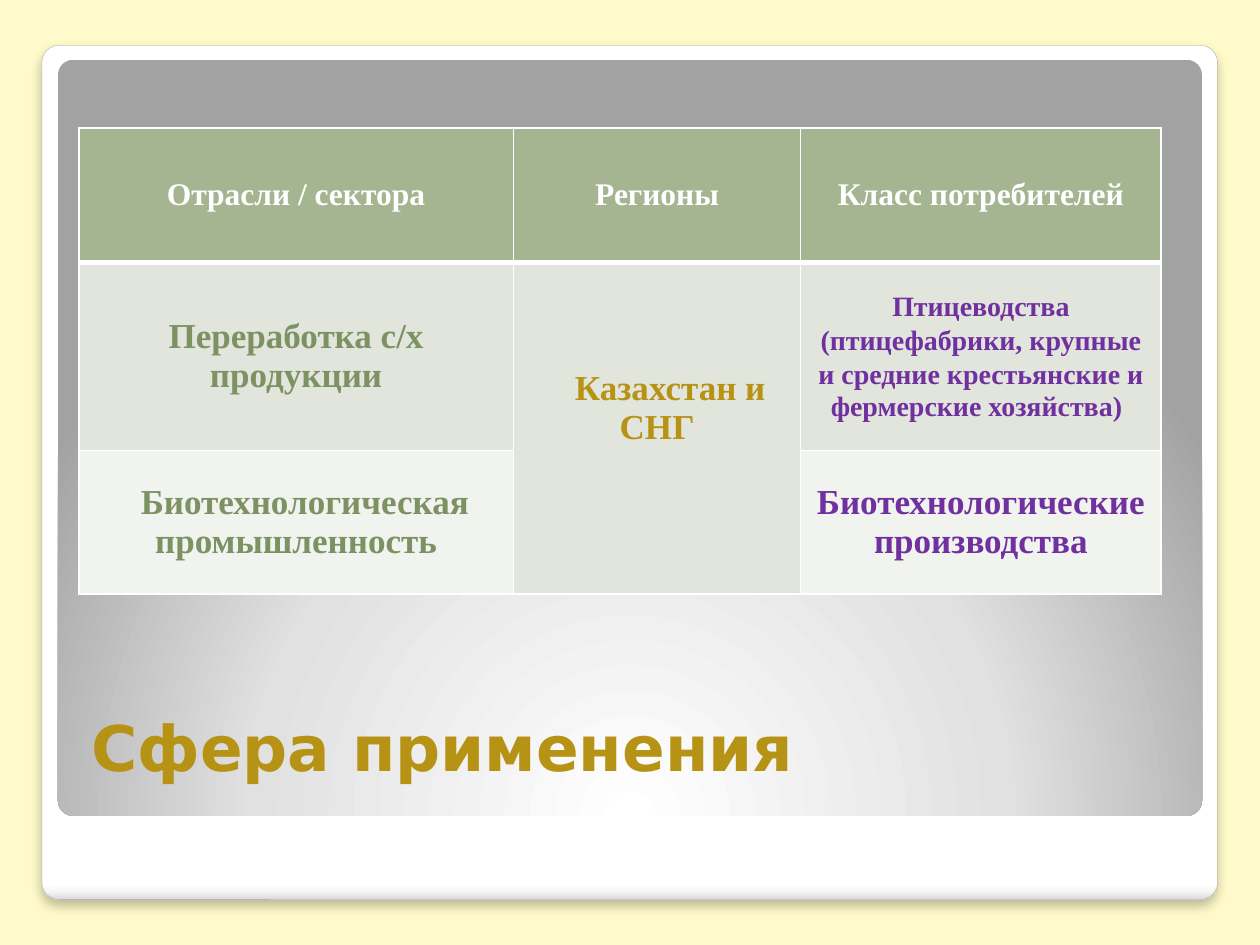
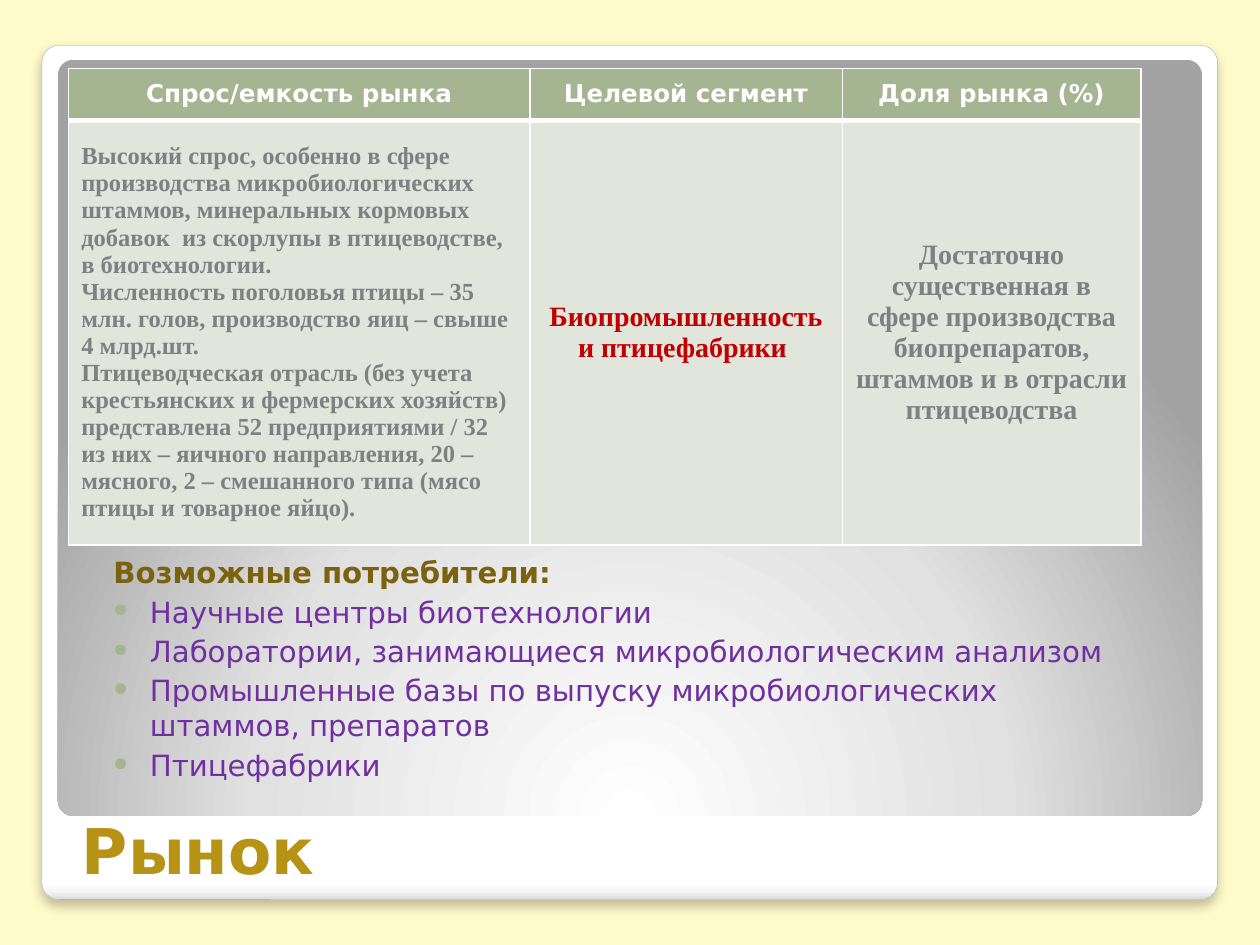
from collections import namedtuple

from lxml.etree import SubElement
from pptx import Presentation
from pptx.dml.color import RGBColor
from pptx.enum.shapes import MSO_SHAPE
from pptx.enum.text import MSO_ANCHOR, MSO_AUTO_SIZE, PP_ALIGN
from pptx.oxml import parse_xml
from pptx.oxml.ns import nsdecls, qn
from pptx.util import Inches, Pt

SLIDE_WIDTH, SLIDE_HEIGHT = Inches(10), Inches(7.5)
COLUMN, ROW = SLIDE_WIDTH / 100, SLIDE_HEIGHT / 75

CREAM = RGBColor(0xFE, 0xFA, 0xC9)
WHITE = RGBColor(0xFF, 0xFF, 0xFF)
PEARL = RGBColor(0xF7, 0xF7, 0xF7)
SILVER = RGBColor(0xE1, 0xE1, 0xE1)
ASH = RGBColor(0xDA, 0xDA, 0xDA)
STEEL = RGBColor(0xA2, 0xA2, 0xA2)
EDGE = RGBColor(0xA4, 0xA4, 0xA4)
GREY = RGBColor(0x80, 0x80, 0x80)
SAGE = RGBColor(0xA5, 0xB5, 0x92)
PALE_SAGE = RGBColor(0xE1, 0xE5, 0xDC)
FAINT_SAGE = RGBColor(0xF0, 0xF3, 0xEE)
OLIVE = RGBColor(0x7D, 0x92, 0x63)
GOLD = RGBColor(0xB7, 0x93, 0x15)
DARK_GOLD = RGBColor(0x7A, 0x62, 0x0E)
PURPLE = RGBColor(0x70, 0x30, 0xA0)
RED = RGBColor(0xC0, 0x00, 0x00)

SANS, SERIF = "DejaVu Sans", "Times New Roman"
TITLE_FONT = {"name": SANS, "size": Pt(36), "bold": True}
CENTRED = {"alignment": PP_ALIGN.CENTER}
BULLET_INDENT = Inches(0.29)

Box = namedtuple("Box", "left top width height")
Entry = namedtuple("Entry", "lines font color para indent tail", defaults=(CENTRED, 0, None))


def grid_box(left, top, width, height):
    """Turn columns and rows of the slide grid into a box."""
    return Box(int(left * COLUMN), int(top * ROW), int(width * COLUMN), int(height * ROW))


def apply(target, values):
    """Set each named attribute on the target."""
    for name, value in values.items():
        setattr(target, name, value)


def write(para, text, font, color, values):
    """Put one formatted span of text in a paragraph."""
    apply(para, values)
    span = para.add_run()
    span.text = text
    apply(span.font, font)
    span.font.color.rgb = color


def shares(total, weights):
    """Split a length in proportion to the weights."""
    return [int(total * weight / sum(weights)) for weight in weights]


def gradient(stops, direction):
    """Build a gradient fill from stops in percent and a direction element."""
    marks = "".join(
        f'<a:gs pos="{place * 1000}"><a:srgbClr val="{color}"/></a:gs>' for place, color in stops
    )
    return parse_xml(
        f'<a:gradFill {nsdecls("a")} rotWithShape="1"><a:gsLst>{marks}</a:gsLst>{direction}</a:gradFill>'
    )


def add_panel(page, box, fill):
    """Add a slightly rounded panel with a gradient fill."""
    panel = page.shapes.add_shape(MSO_SHAPE.ROUNDED_RECTANGLE, *box)
    panel.adjustments[0] = 0.02
    panel.shadow.inherit = False
    panel.line.fill.background()
    panel._element.spPr.find(qn("a:prstGeom")).addnext(fill)
    return panel


def add_frame(deck, page):
    """Give the master its background, card and inner panel."""
    background = deck.slide_master.background.fill
    background.solid()
    background.fore_color.rgb = CREAM
    card_fill = gradient(
        [(0, WHITE), (98, WHITE), (99, PEARL), (100, ASH)], '<a:lin ang="5400000" scaled="0"/>'
    )
    panel_fill = gradient(
        [(0, WHITE), (55, SILVER), (100, STEEL)],
        '<a:path path="circle"><a:fillToRect l="50000" t="175000" r="50000" b="-75000"/></a:path>',
    )
    card = add_panel(page, grid_box(3.33, 3.6, 93.3, 67.8), card_fill)
    card.line.color.rgb = EDGE
    card.line.width = Pt(0.16)
    shadow = parse_xml(
        f'<a:outerShdw {nsdecls("a")} blurRad="{Pt(6)}" dist="{Pt(4)}" dir="5400000" rotWithShape="0">'
        '<a:srgbClr val="000000"><a:alpha val="25000"/></a:srgbClr></a:outerShdw>'
    )
    card._element.spPr.find(qn("a:effectLst")).append(shadow)
    panel = add_panel(page, grid_box(4.6, 4.75, 90.8, 60), panel_fill)
    tree = deck.slide_master.shapes._spTree
    for depth, shape in enumerate((card, panel), start=2):
        tree.insert(depth, shape._element)


def add_title(page, box, text):
    """Place and format the title placeholder."""
    title = page.shapes.title
    apply(title, box._asdict())
    frame = title.text_frame
    apply(frame, {"vertical_anchor": MSO_ANCHOR.BOTTOM, "auto_size": MSO_AUTO_SIZE.NONE, "word_wrap": True})
    write(frame.paragraphs[0], text, TITLE_FONT, GOLD, {"alignment": PP_ALIGN.LEFT})


def set_borders(cell, bottom):
    """Draw white borders round a cell with a given bottom width."""
    properties = cell._tc.get_or_add_tcPr()
    for depth, (side, width) in enumerate((("L", 1), ("R", 1), ("T", 1), ("B", bottom))):
        line = parse_xml(
            f'<a:ln{side} {nsdecls("a")} w="{Pt(width)}"><a:solidFill>'
            f'<a:srgbClr val="{WHITE}"/></a:solidFill></a:ln{side}>'
        )
        properties.insert(depth, line)


def fill_cell(cell, entry):
    """Write an entry's lines into a cell."""
    frame = cell.text_frame
    for number, line in enumerate(entry.lines):
        para = frame.add_paragraph() if number else frame.paragraphs[0]
        write(para, line, entry.font, entry.color, entry.para)
        if entry.indent:
            para._p.get_or_add_pPr().set("indent", str(entry.indent))
        if entry.tail:
            write(para, " ", entry.tail, entry.color, entry.para)


def add_grid(page, box, columns, rows, entries):
    """Add a table with a sage header and pale body rows."""
    table = page.shapes.add_table(len(rows), len(columns), *box).table
    table.horz_banding = False
    for column, width in zip(table.columns, shares(box.width, columns)):
        column.width = width
    for row, height in zip(table.rows, shares(box.height, rows)):
        row.height = height
    fills = (SAGE, PALE_SAGE, FAINT_SAGE)
    for number, line in enumerate(entries):
        for cell, entry in zip(table.rows[number].cells, line):
            cell.vertical_anchor = MSO_ANCHOR.MIDDLE
            cell.fill.solid()
            cell.fill.fore_color.rgb = fills[number]
            set_borders(cell, 1 if number else 3)
            if entry:
                fill_cell(cell, entry)
    return table


def header(labels, font):
    """Make the white header entries of a table."""
    return [Entry([label], font, WHITE) for label in labels]


def add_bullet(para):
    """Give a paragraph a sage bullet and a hanging indent."""
    properties = para._p.get_or_add_pPr()
    properties.set("marL", str(BULLET_INDENT))
    properties.set("indent", str(-BULLET_INDENT))
    SubElement(SubElement(properties, qn("a:buClr")), qn("a:srgbClr")).set("val", str(SAGE))
    SubElement(properties, qn("a:buSzPct")).set("val", "63000")
    SubElement(properties, qn("a:buChar")).set("char", "●")


def add_consumers(page, box, heading, items):
    """Add a bold heading with a bulleted list below it."""
    frame = page.shapes.add_textbox(*box).text_frame
    margins = {"margin_left": 0.2, "margin_top": 0.1, "margin_right": 0.1, "margin_bottom": 0.05}
    apply(frame, {name: Inches(size) for name, size in margins.items()})
    frame.word_wrap = True
    font = {"name": SANS, "size": Pt(16.7)}
    spacing = {"space_before": Pt(2.5)}
    write(frame.paragraphs[0], heading, {**font, "bold": True}, DARK_GOLD, spacing)
    for item in items:
        para = frame.add_paragraph()
        write(para, item, font, PURPLE, spacing)
        add_bullet(para)


def build_application(page):
    """Build the slide on the field of application."""
    add_title(page, grid_box(6.25, 54.7, 85.2, 8), "Сфера применения")
    bold = {"name": SERIF, "bold": True}
    label, body, small = ({**bold, "size": Pt(size)} for size in (18, 20, 16))
    consumers = "Птицеводства (птицефабрики, крупные и средние крестьянские и фермерские хозяйства)"
    exact = {**CENTRED, "line_spacing": Pt(19.2)}
    entries = [
        header(["Отрасли / сектора", "Регионы", "Класс потребителей"], label),
        [
            Entry(["Переработка с/х продукции"], body, OLIVE),
            Entry(["Казахстан и СНГ"], body, GOLD, indent=Pt(15)),
            Entry([consumers], small, PURPLE, exact, tail=body),
        ],
        [
            Entry(["Биотехнологическая промышленность"], body, OLIVE, indent=Pt(10)),
            None,
            Entry(["Биотехнологические производства"], body, PURPLE),
        ],
    ]
    table = add_grid(
        page, grid_box(6.25, 10.15, 85.9, 37), (3.45, 2.28, 2.86), (1.07, 1.49, 1.14), entries
    )
    region = table.cell(1, 1)
    region.merge(table.cell(2, 1))
    region.margin_bottom = Inches(0.37)


def build_market(page):
    """Build the slide on the market."""
    add_title(page, grid_box(5.5, 63.3, 89.5, 7.6), "Рынок")
    add_consumers(
        page,
        grid_box(7, 43, 82.8, 22),
        "Возможные потребители:",
        [
            "Научные центры биотехнологии",
            "Лаборатории, занимающиеся микробиологическим анализом",
            "Промышленные базы по выпуску микробиологических штаммов, препаратов",
            "Птицефабрики",
        ],
    )
    label = {"name": SANS, "size": Pt(14), "bold": True}
    small = {**label, "name": SERIF}
    body = {**small, "size": Pt(16)}
    demand = [
        "Высокий спрос, особенно в сфере производства микробиологических штаммов, минеральных "
        "кормовых добавок  из скорлупы в птицеводстве, в биотехнологии.",
        "Численность поголовья птицы – 35 млн. голов, производство яиц – свыше 4 млрд.шт.",
        "Птицеводческая отрасль (без учета крестьянских и фермерских хозяйств) представлена "
        "52 предприятиями / 32 из них – яичного направления, 20 – мясного, 2 – смешанного типа "
        "(мясо птицы и товарное яйцо).",
    ]
    share = (
        "Достаточно существенная в сфере производства биопрепаратов, "
        "штаммов и в отрасли птицеводства"
    )
    entries = [
        header(["Спрос/емкость рынка", "Целевой сегмент", "Доля рынка (%)"], label),
        [
            Entry(demand, small, GREY, {"alignment": PP_ALIGN.LEFT}),
            Entry(["Биопромышленность и птицефабрики"], body, RED, tail=body),
            Entry([share], body, GREY),
        ],
    ]
    add_grid(page, grid_box(5.45, 5.45, 85.1, 8.2), (3.66, 2.48, 2.37), (0.41, 0.41), entries)


def main():
    """Build and save the deck."""
    deck = Presentation()
    apply(deck, {"slide_width": SLIDE_WIDTH, "slide_height": SLIDE_HEIGHT})
    title_only = deck.slide_layouts.get_by_name("Title Only")
    pages = [deck.slides.add_slide(title_only) for _ in range(2)]
    add_frame(deck, pages[0])
    for build, page in zip((build_application, build_market), pages):
        build(page)
    deck.save("out.pptx")


if __name__ == "__main__":
    main()
